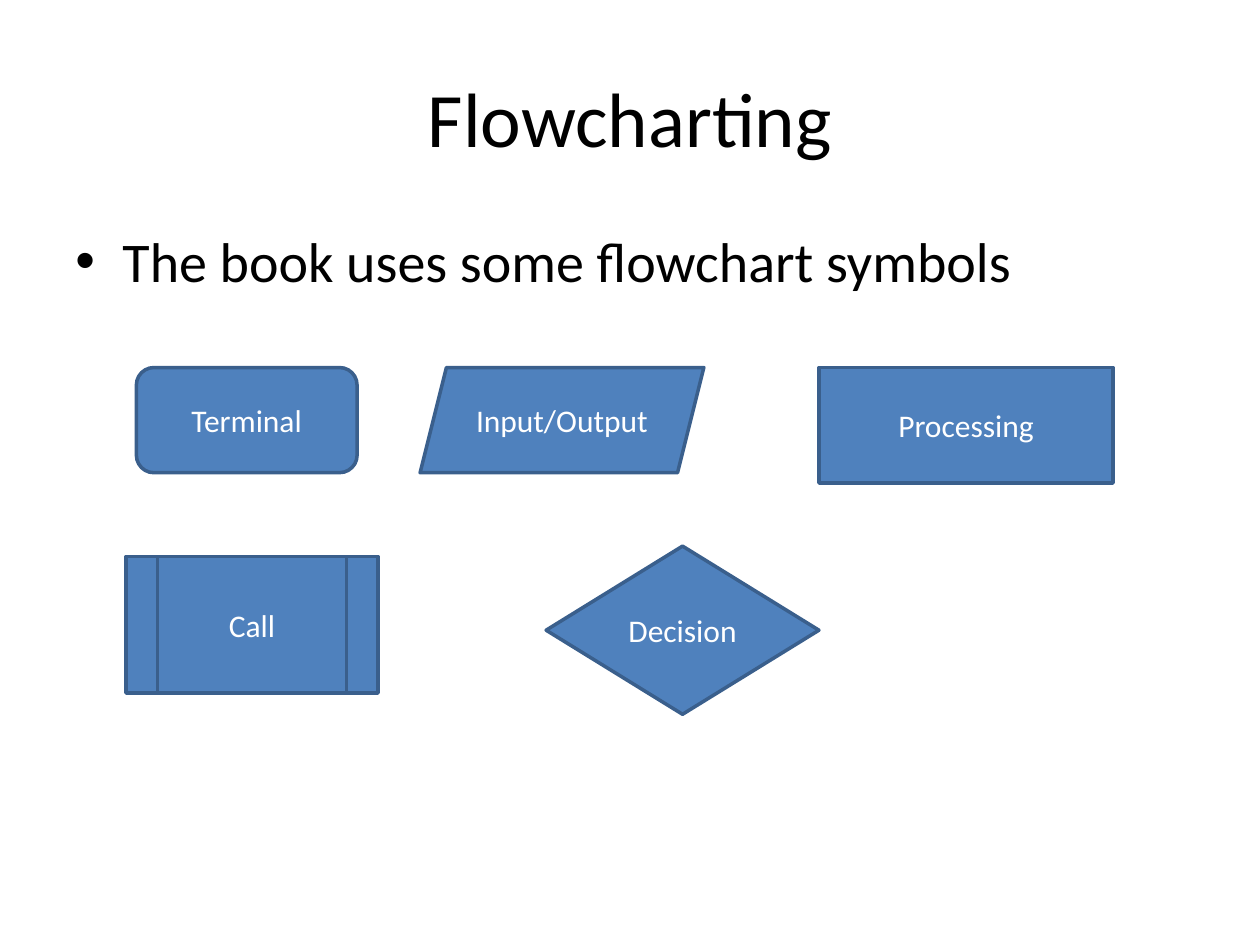
import pptx
import pptx.util
import pptx.dml.color
import pptx.enum.shapes
import pptx.enum.text
import lxml.etree

Cm = pptx.util.Cm
Pt = pptx.util.Pt
RGBColor = pptx.dml.color.RGBColor
Shape = pptx.enum.shapes.MSO_SHAPE
Align = pptx.enum.text.PP_ALIGN
Anchor = pptx.enum.text.MSO_ANCHOR

BLACK = RGBColor(0x00, 0x00, 0x00)
WHITE = RGBColor(0xFF, 0xFF, 0xFF)
BLUE = RGBColor(0x4F, 0x81, 0xBD)
DARK_BLUE = RGBColor(0x3A, 0x5F, 0x8C)
FONT = "Calibri"

TITLE = "Flowcharting"
BULLET = "The book uses some flowchart symbols"
MARGIN = 1.27
FIRST_ROW = 7.41
SYMBOLS = [
    ("Terminal", Shape.ROUNDED_RECTANGLE, 2.75, FIRST_ROW, 4.45, 2.12),
    ("Input/Output", Shape.PARALLELOGRAM, 8.47, FIRST_ROW, 5.72, 2.12),
    ("Processing", Shape.RECTANGLE, 16.51, FIRST_ROW, 5.93, 2.33),
    ("Call", Shape.FLOWCHART_PREDEFINED_PROCESS, 2.54, 11.22, 5.08, 2.75),
    ("Decision", Shape.FLOWCHART_DECISION, 11.01, 11.01, 5.5, 3.39),
]


def write(box, text, size, color, align, anchor):
    frame = box.text_frame
    frame.word_wrap = True
    frame.vertical_anchor = anchor
    para = frame.paragraphs[0]
    para.alignment = align
    span = para.add_run()
    span.text = text
    span.font.name = FONT
    span.font.size = Pt(size)
    span.font.color.rgb = color
    return para


def add_bullet(para, indent):
    properties = para._p.get_or_add_pPr()
    properties.set("marL", str(indent))
    properties.set("indent", str(-indent))
    namespace = "{http://schemas.openxmlformats.org/drawingml/2006/main}"
    lxml.etree.SubElement(properties, namespace + "buFont", typeface="Arial")
    lxml.etree.SubElement(properties, namespace + "buChar", char="•")


def add_symbol(page, label, kind, left, top, width, height):
    symbol = page.shapes.add_shape(kind, Cm(left), Cm(top), Cm(width), Cm(height))
    symbol.shadow.inherit = False
    symbol.fill.solid()
    symbol.fill.fore_color.rgb = BLUE
    symbol.line.color.rgb = DARK_BLUE
    symbol.line.width = Pt(2)
    write(symbol, label, 18, WHITE, Align.CENTER, Anchor.MIDDLE)


def main():
    deck = pptx.Presentation()
    deck.slide_width = Cm(25.4)
    deck.slide_height = Cm(19.05)
    page = deck.slides.add_slide(deck.slide_layouts[6])
    content_width = deck.slide_width - 2 * Cm(MARGIN)

    title = page.shapes.add_textbox(Cm(MARGIN), Cm(0.76), content_width, Cm(3.18))
    write(title, TITLE, 44, BLACK, Align.CENTER, Anchor.MIDDLE)

    body = page.shapes.add_textbox(Cm(MARGIN), Cm(4.45), content_width, Cm(12.57))
    para = write(body, BULLET, 32, BLACK, Align.LEFT, Anchor.TOP)
    add_bullet(para, Cm(0.95))

    for symbol in SYMBOLS:
        add_symbol(page, *symbol)
    deck.save("out.pptx")


if __name__ == "__main__":
    main()
